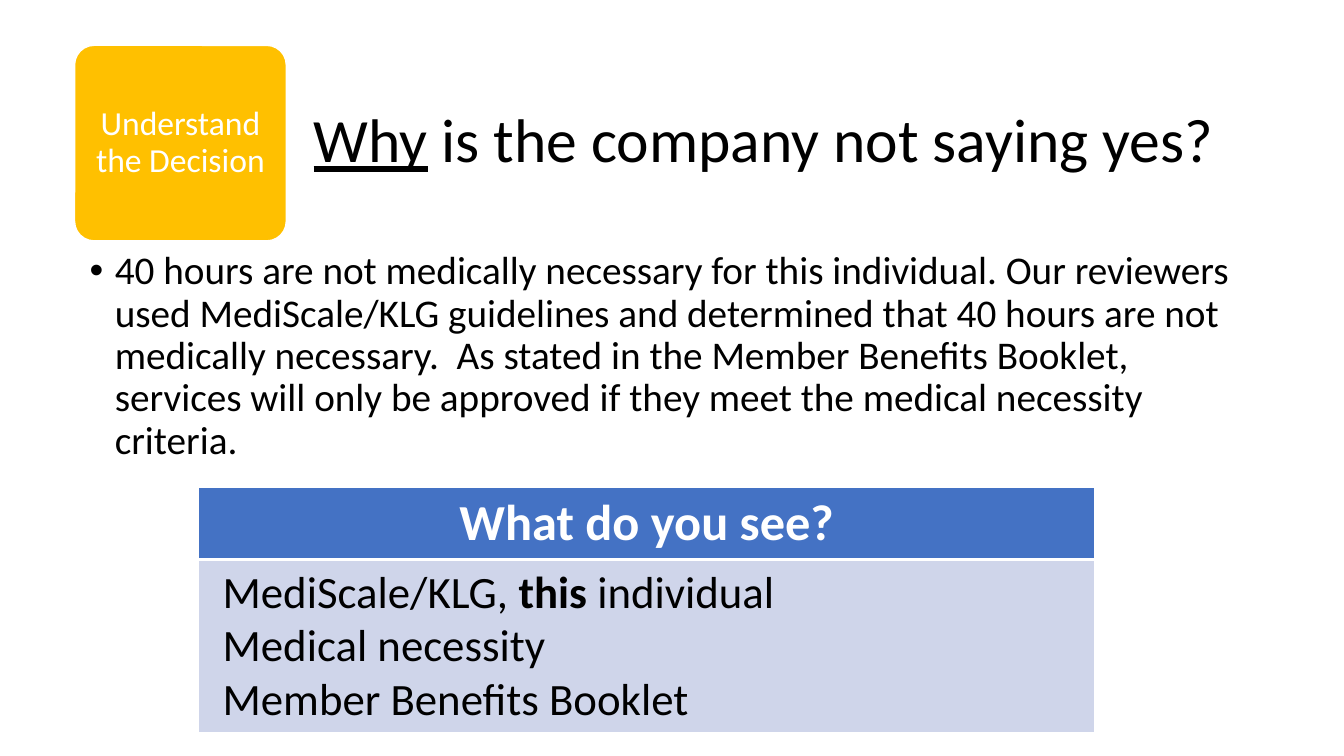
from dataclasses import dataclass

from lxml.etree import SubElement
from pptx import Presentation
from pptx.dml.color import RGBColor
from pptx.enum.shapes import MSO_SHAPE as Preset
from pptx.enum.text import MSO_ANCHOR as Anchor, PP_ALIGN as Align
from pptx.oxml.ns import qn
from pptx.util import Emu, Inches, Pt

FONT = "Calibri"
COLORS = {
    "ink": "000000",
    "paper": "FFFFFF",
    "badge": "FFC000",
    "header": "4472C4",
    "band": "CFD5EA",
}

deck = Presentation()
deck.slide_width, deck.slide_height = Inches(13.33), Inches(7.5)


@dataclass(frozen=True)
class Box:
    """Left, top, width and height in percent of the slide's size."""
    left: float
    top: float
    width: float
    height: float

    def emu(self) -> tuple[Emu, Emu, Emu, Emu]:
        return across(self.left), down(self.top), across(self.width), down(self.height)


@dataclass(frozen=True)
class Run:
    text: str
    bold: bool | None = None
    underline: bool | None = None


@dataclass(frozen=True)
class Style:
    size: int
    color: str = "ink"
    align: Align = Align.LEFT
    spacing: float = 1.0
    bold: bool = False
    bullet: bool = False


def across(share: float) -> Emu:
    return Emu(round(deck.slide_width * share / 100))


def down(share: float) -> Emu:
    return Emu(round(deck.slide_height * share / 100))


def rgb(name: str) -> RGBColor:
    return RGBColor.from_string(COLORS[name])


def write(frame, lines: list[list[Run]], style: Style) -> None:
    frame.word_wrap = True
    for index, line in enumerate(lines):
        paragraph = frame.add_paragraph() if index else frame.paragraphs[0]
        if style.bullet:
            props = paragraph._p.get_or_add_pPr()
            props.set("marL", str(Inches(0.25)))
            props.set("indent", str(-Inches(0.25)))
            SubElement(props, qn("a:buFont"), typeface="Arial")
            SubElement(props, qn("a:buChar"), char="•")
        paragraph.alignment = style.align
        paragraph.line_spacing = style.spacing
        font = paragraph.font
        font.name, font.size, font.bold = FONT, Pt(style.size), style.bold
        font.color.rgb = rgb(style.color)
        for part in line:
            run = paragraph.add_run()
            run.text = part.text
            if part.bold is not None:
                run.font.bold = part.bold
            if part.underline is not None:
                run.font.underline = part.underline


def paint_cell(cell, fill: str, bottom: float) -> None:
    props = cell._tc.get_or_add_tcPr()
    for side, points in (("L", 1), ("R", 1), ("T", 1), ("B", bottom)):
        edge = SubElement(props, qn(f"a:ln{side}"), w=str(Pt(points)))
        paint = SubElement(edge, qn("a:solidFill"))
        SubElement(paint, qn("a:srgbClr"), val=COLORS["paper"])
    cell.fill.solid()
    cell.fill.fore_color.rgb = rgb(fill)


def add_text(slide, box: Box, lines: list[list[Run]], style: Style) -> None:
    write(slide.shapes.add_textbox(*box.emu()).text_frame, lines, style)


def add_badge(slide, box: Box, label: str) -> None:
    badge = slide.shapes.add_shape(Preset.ROUNDED_RECTANGLE, *box.emu())
    badge.adjustments[0] = 0.1
    badge.shadow.inherit = False
    badge.fill.solid()
    badge.fill.fore_color.rgb = rgb("badge")
    badge.line.color.rgb = rgb("paper")
    badge.line.width = Pt(1)
    frame = badge.text_frame
    frame.margin_left = frame.margin_right = Inches(0.04)
    frame.margin_top = frame.margin_bottom = Inches(0.03)
    frame.vertical_anchor = Anchor.MIDDLE
    write(frame, [[Run(label)]], Style(24, "paper", Align.CENTER, 0.9))


def add_findings(slide, box: Box, heading: str, header_height: float) -> None:
    table = slide.shapes.add_table(2, 1, *box.emu()).table
    table.rows[0].height = down(header_height)
    table.rows[1].height = down(box.height - header_height)
    header, body = table.cell(0, 0), table.cell(1, 0)
    paint_cell(header, "header", 3)
    paint_cell(body, "band", 1)
    write(header.text_frame, [[Run(heading)]],
          Style(36, "paper", Align.CENTER, bold=True))


def main() -> None:
    slide = deck.slides.add_slide(deck.slide_layouts[5])

    # Title
    title = slide.shapes.title
    title.left, title.top, title.width, title.height = Box(22.58, 9.2, 69.62, 19.33).emu()
    title.text_frame.vertical_anchor = Anchor.MIDDLE
    write(title.text_frame,
          [[Run("Why", underline=True), Run(" is the company not saying yes?")]],
          Style(44, spacing=0.9))

    # Step badge
    add_badge(slide, Box(5.55, 6, 15.75, 25.87), "Understand the Decision")

    # Stated reason
    reason = (
        "40 hours are not medically necessary for this individual. Our reviewers "
        "used MediScale/KLG guidelines and determined that 40 hours are not "
        "medically necessary.  As stated in the Member Benefits Booklet, services "
        "will only be approved if they meet the medical necessity criteria."
    )
    add_text(slide, Box(5.93, 32.53, 86.27, 63.47), [[Run(reason)]],
             Style(28, spacing=0.9, bullet=True))

    # Findings table with its answers on top
    add_findings(slide, Box(14.78, 64.53, 66.69, 32.4), "What do you see?", 9.47)
    answers = [
        [Run("MediScale/KLG, "), Run("this", bold=True), Run(" individual")],
        [Run("Medical necessity")],
        [Run("Member Benefits Booklet")],
    ]
    add_text(slide, Box(15.83, 73.87, 66.62, 22.93), answers, Style(32))

    deck.save("out.pptx")


if __name__ == "__main__":
    main()
